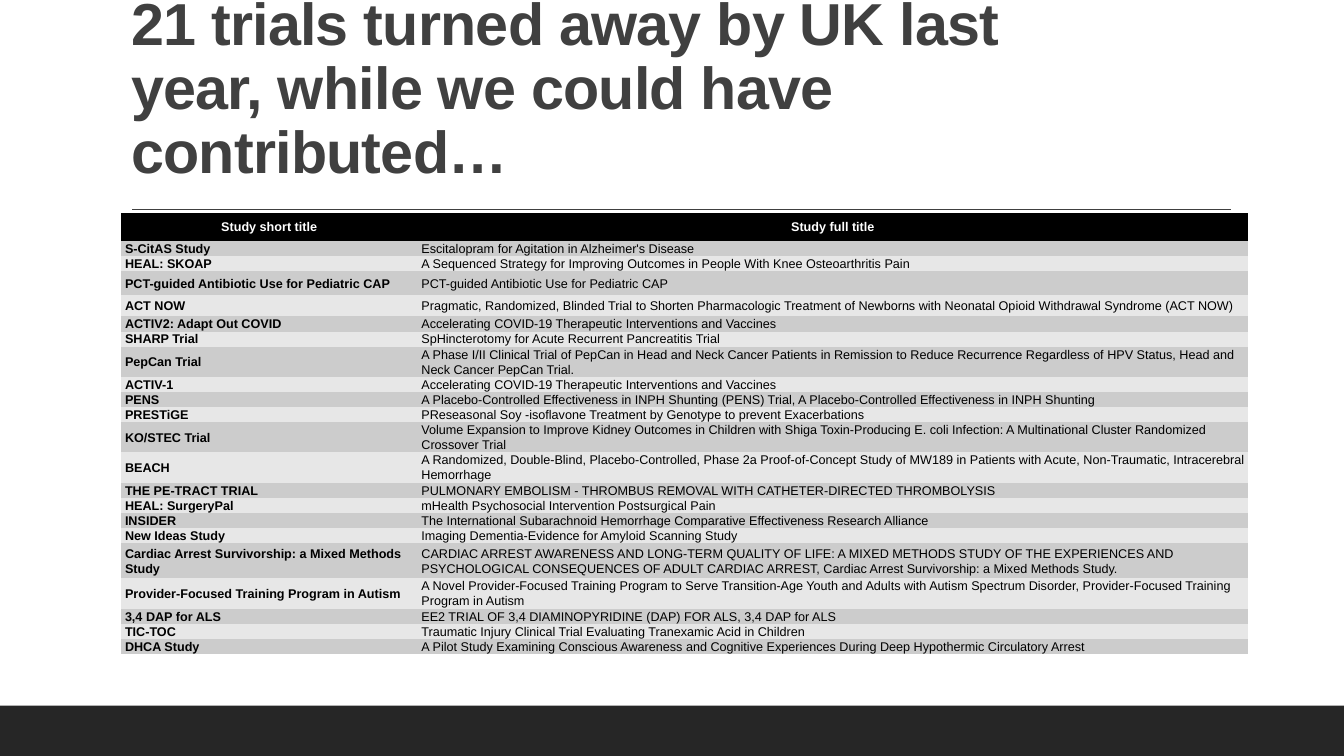
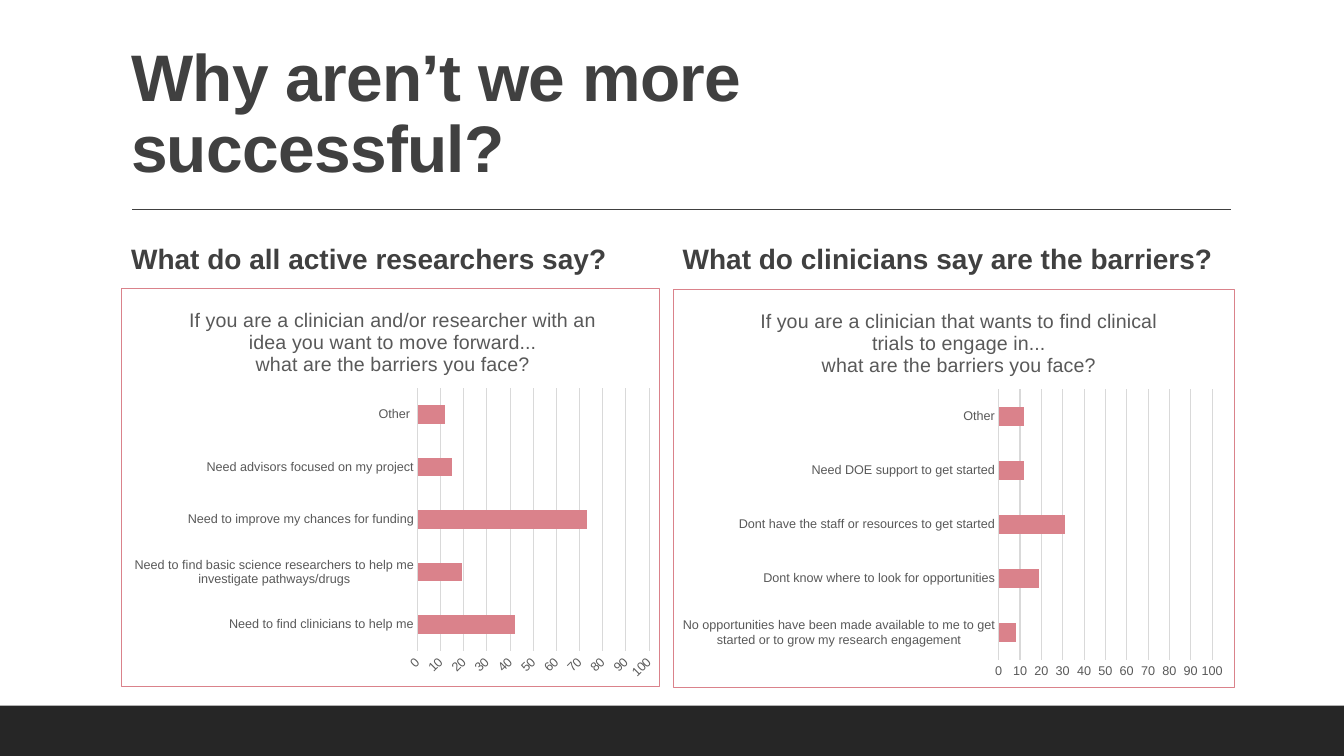
from dataclasses import dataclass

from lxml import etree
from pptx import Presentation
from pptx import util as u
from pptx.chart import data as chart_data
from pptx.dml import color
from pptx.enum import chart as charts, shapes, text
from pptx.oxml import ns


@dataclass(frozen=True)
class Theme:
    font: str = "Arial"
    ink: str = "404040"
    band: str = "262626"
    accent: str = "DA828B"
    label: str = "595959"
    grid: str = "D9D9D9"
    white: str = "FFFFFF"
    black: str = "000000"
    stripes: tuple = ("E7E7E7", "CCCCCC")
    long_title_size: float = 42.3
    title_size: float = 47
    heading_size: float = 20
    chart_title_size: float = 14
    chart_size: float = 10
    small_size: float = 9
    hairline: float = 0.75
    rule_width: float = 1


LEFT = 1.2
MIDDLE = 6.67
TITLE_ONLY, TWO_CONTENT = 5, 3
NO_TABLE_STYLE = "{2D5ABB26-0587-4C30-8999-92F81FD0307C}"

TRIALS = [
    ("Study short title", "Study full title"),
    ("S-CitAS Study", "Escitalopram for Agitation in Alzheimer's Disease"),
    ("HEAL: SKOAP", "A Sequenced Strategy for Improving Outcomes in People With Knee Osteoarthritis Pain"),
    ("PCT-guided Antibiotic Use for Pediatric CAP", "PCT-guided Antibiotic Use for Pediatric CAP"),
    ("ACT NOW", "Pragmatic, Randomized, Blinded Trial to Shorten Pharmacologic Treatment of Newborns "
                "with Neonatal Opioid Withdrawal Syndrome (ACT NOW)"),
    ("ACTIV2: Adapt Out COVID", "Accelerating COVID-19 Therapeutic Interventions and Vaccines"),
    ("SHARP Trial", "SpHincterotomy for Acute Recurrent Pancreatitis Trial"),
    ("PepCan Trial", "A Phase I/II Clinical Trial of PepCan in Head and Neck Cancer Patients in Remission "
                     "to Reduce Recurrence Regardless of HPV Status, Head and Neck Cancer PepCan Trial."),
    ("ACTIV-1", "Accelerating COVID-19 Therapeutic Interventions and Vaccines"),
    ("PENS", "A Placebo-Controlled Effectiveness in INPH Shunting (PENS) Trial, "
             "A Placebo-Controlled Effectiveness in INPH Shunting"),
    ("PRESTiGE", "PReseasonal Soy -isoflavone Treatment by Genotype to prevent Exacerbations"),
    ("KO/STEC Trial", "Volume Expansion to Improve Kidney Outcomes in Children with Shiga Toxin-Producing "
                      "E. coli Infection: A Multinational Cluster Randomized Crossover Trial"),
    ("BEACH", "A Randomized, Double-Blind, Placebo-Controlled, Phase 2a Proof-of-Concept Study of MW189 "
              "in Patients with Acute, Non-Traumatic, Intracerebral Hemorrhage"),
    ("THE PE-TRACT TRIAL", "PULMONARY EMBOLISM - THROMBUS REMOVAL WITH CATHETER-DIRECTED THROMBOLYSIS"),
    ("HEAL: SurgeryPal", "mHealth Psychosocial Intervention Postsurgical Pain"),
    ("INSIDER", "The International Subarachnoid Hemorrhage Comparative Effectiveness Research Alliance"),
    ("New Ideas Study", "Imaging Dementia-Evidence for Amyloid Scanning Study"),
    ("Cardiac Arrest Survivorship: a Mixed Methods Study",
     "CARDIAC ARREST AWARENESS AND LONG-TERM QUALITY OF LIFE: A MIXED METHODS STUDY OF THE EXPERIENCES "
     "AND PSYCHOLOGICAL CONSEQUENCES OF ADULT CARDIAC ARREST, "
     "Cardiac Arrest Survivorship: a Mixed Methods Study."),
    ("Provider-Focused Training Program in Autism",
     "A Novel Provider-Focused Training Program to Serve Transition-Age Youth and Adults with "
     "Autism Spectrum Disorder, Provider-Focused Training Program in Autism"),
    ("3,4 DAP for ALS", "EE2 TRIAL OF 3,4 DIAMINOPYRIDINE (DAP) FOR ALS, 3,4 DAP for ALS"),
    ("TIC-TOC", "Traumatic Injury Clinical Trial Evaluating Tranexamic Acid in Children"),
    ("DHCA Study", "A Pilot Study Examining Conscious Awareness and Cognitive Experiences During "
                   "Deep Hypothermic Circulatory Arrest"),
]
ROW_HEIGHT = 0.14
TALL_ROWS = {0: 0.28, 3: 0.24, 4: 0.21, 7: 0.29, 11: 0.29, 12: 0.29, 17: 0.35, 18: 0.29}

BARRIERS = [
    dict(
        heading="What do all active researchers say?",
        title=["If you are a clinician and/or researcher with an idea you want to move forward...",
               "what are the barriers you face?"],
        bars={"Need to find clinicians to help me": 42,
              "Need to find basic science researchers to help me investigate pathways/drugs": 19,
              "Need to improve my chances for funding": 73,
              "Need advisors focused on my project": 15,
              "Other ": 12},
        frame=(LEFT, 2.86, 5.35, 3.96), title_at=(0.12, 0.04),
        plot_at=(0.55, 0.25, 0.43, 0.66), tilt=-45),
    dict(
        heading="What do clinicians say are the barriers?",
        title=["If you are a clinician that wants to find clinical trials to engage in...",
               "what are the barriers you face?"],
        bars={"No opportunities have been made available to me to get started "
              "or to grow my research engagement": 8,
              "Dont know where to look for opportunities": 19,
              "Dont have the staff or resources to get started": 31,
              "Need DOE support to get started": 12,
              "Other": 12},
        frame=(MIDDLE, 2.87, 5.58, 3.96), title_at=(0.15, 0.04),
        plot_at=(0.58, 0.25, 0.38, 0.68), tilt=0),
]


def rgb(value):
    return color.RGBColor.from_string(value)


def inches(values):
    return [u.Inches(value) for value in values]


def place(parent, index, values):
    layout = parent.find(ns.qn("c:layout"))
    if layout is not None:
        parent.remove(layout)
    layout = etree.Element(ns.qn("c:layout"))
    parent.insert(index, layout)
    manual = etree.SubElement(layout, ns.qn("c:manualLayout"))
    settings = [("layoutTarget", "inner")] if len(values) == 4 else []
    settings += [("xMode", "edge"), ("yMode", "edge")]
    settings += zip("xywh", values)
    for tag, value in settings:
        etree.SubElement(manual, ns.qn("c:" + tag)).set("val", str(value))


class Builder:
    def __init__(self, theme):
        self.theme = theme
        self.deck = Presentation()
        self.deck.slide_width, self.deck.slide_height = inches((13.33, 7.5))
        self.page = None

    def new_page(self, layout):
        self.page = self.deck.slides.add_slide(self.deck.slide_layouts[layout])
        if len(self.deck.slides) == 1:
            self.master_decoration()

    def master_decoration(self):
        band = self.page.shapes.add_shape(shapes.MSO_SHAPE.RECTANGLE, *inches((0, 7, 13.33, 0.5)))
        band.shadow.inherit = False
        band.fill.solid()
        band.fill.fore_color.rgb = rgb(self.theme.band)
        band.line.fill.background()
        rule = self.page.shapes.add_connector(
            shapes.MSO_CONNECTOR.STRAIGHT, *inches((1.31, 2.08, 12.21, 2.08)))
        rule.line.color.rgb = rgb(self.theme.ink)
        rule.line.width = u.Pt(self.theme.rule_width)
        etree.SubElement(rule.element.spPr, ns.qn("a:effectLst"))
        master = self.deck.slide_master.shapes
        for number, shape in enumerate((band, rule), start=101):
            shape.element.xpath(".//p:cNvPr")[0].set("id", str(number))
            master.element.append(shape.element)

    def style(self, font, size, tone, bold=False):
        font.name = self.theme.font
        font.size = u.Pt(size)
        font.bold = bold
        font.color.rgb = rgb(tone)

    def add_text(self, para, words, size, tone, bold=False):
        span = para.add_run()
        span.text = words
        self.style(span.font, size, tone, bold)
        return span

    def fit(self, box, frame):
        box.left, box.top, box.width, box.height = inches(frame)
        box.text_frame.word_wrap = True
        box.text_frame.auto_size = text.MSO_AUTO_SIZE.NONE

    def title(self, words, size):
        box = self.page.shapes.title
        self.fit(box, (LEFT, 0.31, 9.48, 1.59))
        box.text_frame.vertical_anchor = text.MSO_ANCHOR.BOTTOM
        para = box.text_frame.paragraphs[0]
        para.alignment = text.PP_ALIGN.LEFT
        para.line_spacing = 0.9
        span = self.add_text(para, words, size, self.theme.ink, True)
        span.font._element.set("spc", "-50")

    def heading(self, index, words, left):
        box = self.page.placeholders[index]
        self.fit(box, (left, 2.31, 5.47, 4.11))
        frame = box.text_frame
        frame.margin_left = frame.margin_right = 0
        para = frame.paragraphs[0]
        properties = para._p.get_or_add_pPr()
        properties.set("marL", str(u.Inches(0.1)))
        properties.set("indent", "0")
        etree.SubElement(properties, ns.qn("a:buNone"))
        para.line_spacing = 1.1
        para.space_before = u.Pt(0)
        para.space_after = u.Pt(2)
        self.add_text(para, words, self.theme.heading_size, self.theme.ink, True)

    def table(self, rows, widths, left, top):
        heights = [TALL_ROWS.get(index, ROW_HEIGHT) for index in range(len(rows))]
        holder = self.page.shapes.add_table(
            len(rows), len(widths), *inches((left, top, sum(widths), sum(heights))))
        table = holder.table
        table._tbl.tblPr.find(ns.qn("a:tableStyleId")).text = NO_TABLE_STYLE
        for column, width in zip(table.columns, widths):
            column.width = u.Inches(width)
        for row_index, row in enumerate(rows):
            table.rows[row_index].height = u.Inches(heights[row_index])
            for column_index, words in enumerate(row):
                self.cell(table.cell(row_index, column_index), words, row_index, column_index)

    def cell(self, cell, words, row_index, column_index):
        header = row_index == 0
        cell.margin_left = cell.margin_right = u.Inches(0.04)
        cell.margin_top = cell.margin_bottom = 0
        cell.vertical_anchor = text.MSO_ANCHOR.MIDDLE
        cell.fill.solid()
        cell.fill.fore_color.rgb = rgb(self.theme.black if header else self.theme.stripes[row_index % 2])
        para = cell.text_frame.paragraphs[0]
        para.alignment = text.PP_ALIGN.CENTER if header else text.PP_ALIGN.LEFT
        para.line_spacing = 1.07
        tone = self.theme.white if header else self.theme.black
        self.add_text(para, words, self.theme.small_size, tone, header or column_index == 0)

    def bar_chart(self, title, bars, frame, title_at, plot_at, tilt):
        theme = self.theme
        source = chart_data.CategoryChartData(number_format="0")
        source.categories = list(bars)
        source.add_series("Series 1", list(bars.values()))
        chart = self.page.shapes.add_chart(
            charts.XL_CHART_TYPE.BAR_CLUSTERED, *inches(frame), source).chart
        self.style(chart.font, theme.chart_size, theme.black)
        chart.has_legend = False
        plot = chart.plots[0]
        plot.gap_width = 182
        plot.vary_by_categories = False
        fill = plot.series[0].format.fill
        fill.solid()
        fill.fore_color.rgb = rgb(theme.accent)
        self.axes(chart, tilt)
        self.border(chart)

        chart.has_title = True
        frame = chart.chart_title.text_frame
        for index, words in enumerate(title):
            para = frame.add_paragraph() if index else frame.paragraphs[0]
            self.style(para.font, theme.chart_title_size, theme.label)
            self.add_text(para, words, theme.chart_title_size, theme.label)
        root = chart.element.find(ns.qn("c:chart"))
        place(root.find(ns.qn("c:title")), 1, title_at)
        place(root.find(ns.qn("c:plotArea")), 0, plot_at)

    def axes(self, chart, tilt):
        theme = self.theme
        category, value = chart.category_axis, chart.value_axis
        for axis in (category, value):
            axis.major_tick_mark = axis.minor_tick_mark = charts.XL_TICK_MARK.NONE
            self.style(axis.tick_labels.font, theme.small_size, theme.label)
        category.has_major_gridlines = False
        value.has_major_gridlines = True
        for line in (category.format.line, value.major_gridlines.format.line):
            line.color.rgb = rgb(theme.grid)
            line.width = u.Pt(theme.hairline)
        value.format.line.fill.background()
        value.minimum_scale, value.maximum_scale, value.major_unit = 0, 100, 10
        value.tick_labels.number_format = "0"
        value.tick_labels.number_format_is_linked = False
        body = value._element.find(ns.qn("c:txPr")).find(ns.qn("a:bodyPr"))
        body.set("rot", str(tilt * 60000))

    def border(self, chart):
        properties = etree.Element(ns.qn("c:spPr"))
        line = etree.SubElement(properties, ns.qn("a:ln"), w=str(u.Pt(self.theme.hairline)))
        fill = etree.SubElement(line, ns.qn("a:solidFill"))
        etree.SubElement(fill, ns.qn("a:srgbClr"), val=self.theme.accent)
        chart.element.find(ns.qn("c:chart")).addnext(properties)


def main():
    theme = Theme()
    builder = Builder(theme)

    builder.new_page(TITLE_ONLY)
    builder.title("21 trials turned away by UK last year, while we could have contributed…",
                  theme.long_title_size)
    builder.table(TRIALS, (2.94, 8.24), LEFT, 2.11)

    builder.new_page(TWO_CONTENT)
    builder.title("Why aren’t we more successful?", theme.title_size)
    for index, (left, barrier) in enumerate(zip((LEFT, MIDDLE), BARRIERS), start=1):
        settings = dict(barrier)
        builder.heading(index, settings.pop("heading"), left)
        builder.bar_chart(**settings)

    builder.deck.save("out.pptx")


if __name__ == "__main__":
    main()
